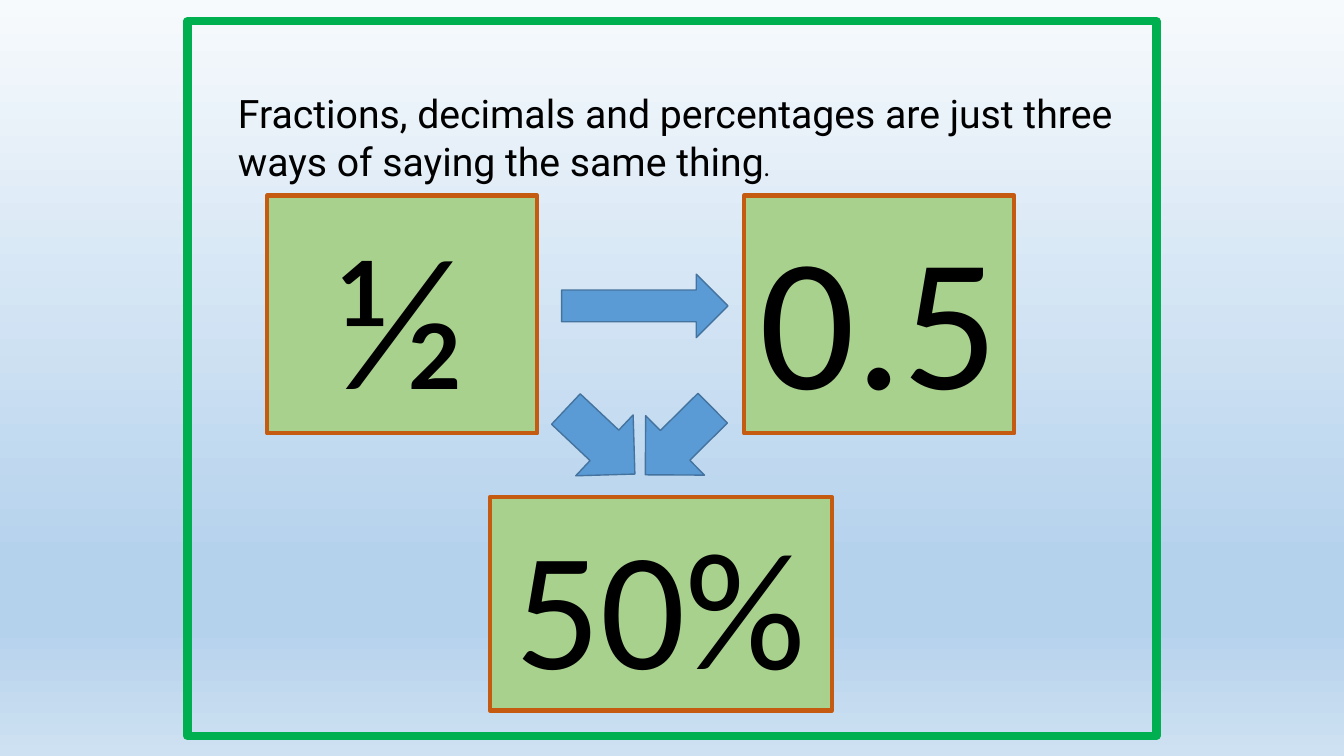
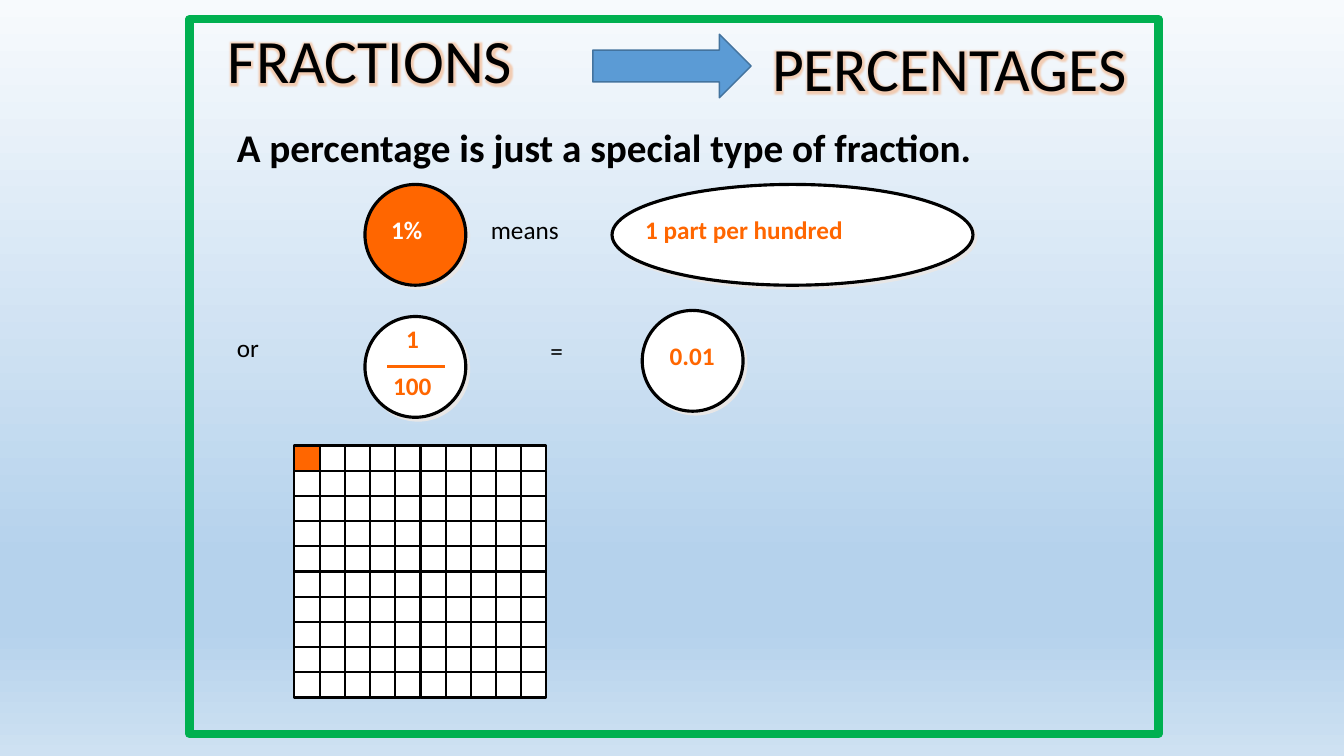
"""Builds two slides on fractions, decimals and percentages."""
from itertools import product

from lxml import etree
from pptx import Presentation
from pptx.dml.color import RGBColor
from pptx.enum.shapes import MSO_CONNECTOR as Connector, MSO_SHAPE as Shape
from pptx.enum.text import MSO_ANCHOR as Anchor, MSO_AUTO_SIZE as AutoSize, PP_ALIGN as Align
from pptx.oxml import parse_xml
from pptx.oxml.ns import nsdecls, qn
from pptx.util import Inches, Pt

COLORS = {
    "ink": "000000", "white": "FFFFFF", "orange": "FF6600", "frame": "00B050",
    "tile": "A9D18E", "tile_edge": "C55A11", "arrow": "5B9BD5", "arrow_edge": "43739E",
    "shadow": "E7E6E6", "glow": "F4B183",
    "sky_top": "F7FAFD", "sky_mid": "B5D2EC", "sky_low": "CEE1F2",
}
SKY = [(0, "sky_top"), (74, "sky_mid"), (83, "sky_mid"), (100, "sky_low")]
CELL = 0.25
CIRCLE = 4
LABEL = 1.6
TITLE_ONLY = 5


def grid(*cells):
    return [Inches(CELL * count) for count in cells]


def rgb(name):
    return RGBColor.from_string(COLORS[name])


def paint_sky(master):
    stops = "".join(
        f'<a:gs pos="{share * 1000}"><a:srgbClr val="{COLORS[name]}"/></a:gs>' for share, name in SKY)
    fill = master.background.fill
    fill.gradient()
    gradient = master.element.find(".//" + qn("a:gradFill"))
    gradient.getparent().replace(gradient, parse_xml(
        f'<a:gradFill {nsdecls("a")} rotWithShape="1"><a:gsLst>{stops}</a:gsLst>'
        '<a:lin ang="5400000" scaled="0"/></a:gradFill>'))


def style_run(run, size, color="ink", bold=False, font="Calibri"):
    run.font.size, run.font.name, run.font.bold = Pt(size), font, bold
    run.font.color.rgb = rgb(color)


def write(shape, text, size, align=Align.LEFT, anchor=Anchor.TOP, wrap=True, **style):
    frame = shape.text_frame
    frame.text = text
    frame.word_wrap, frame.auto_size = wrap, AutoSize.SHAPE_TO_FIT_TEXT
    frame.vertical_anchor = anchor
    paragraph = frame.paragraphs[0]
    paragraph.alignment = align
    style_run(paragraph.runs[0], size, **style)
    return paragraph


def add_glow(paragraph):
    fill = paragraph.runs[0].font.fill
    fill.solid()
    fill.fore_color.rgb = rgb("ink")
    properties = paragraph.runs[0].font._element
    properties.find(qn("a:solidFill")).addnext(parse_xml(
        f'<a:effectLst {nsdecls("a")}><a:glow rad="63500"><a:srgbClr val="{COLORS["glow"]}">'
        '<a:alpha val="60000"/></a:srgbClr></a:glow></a:effectLst>'))


def add_title(slide, place, text, size, **style):
    title = slide.shapes.title
    title.left, title.top, title.width, title.height = grid(*place)
    return write(title, text, size, **style)


def add_label(shapes, place, text, size=18, wrap=False, **style):
    return write(shapes.add_textbox(*grid(*place)), text, size, wrap=wrap, **style)


def add_outline(shapes, kind, place, fill, edge, weight):
    shape = shapes.add_shape(kind, *grid(*place))
    shape.shadow.inherit = False
    if fill:
        shape.fill.solid()
        shape.fill.fore_color.rgb = rgb(fill)
    else:
        shape.fill.background()
    shape.line.color.rgb, shape.line.width = rgb(edge), Pt(weight)
    return shape


def add_frame(slide, left, top):
    add_outline(slide.shapes, Shape.RECTANGLE, (left, top, 38.44, 28.36), None, "frame", 6)


def add_tile(slide, place, text, size):
    tile = add_outline(slide.shapes, Shape.RECTANGLE, place, "tile", "tile_edge", 3)
    write(tile, text, size, align=Align.CENTER)


def add_arrow(slide, kind, place, rotation=0):
    add_outline(slide.shapes, kind, place, "arrow", "arrow_edge", 1).rotation = rotation


def add_bubble(slide, left, top, width=CIRCLE, fill="white"):
    bubble = slide.shapes.add_group_shape()
    oval = add_outline(bubble.shapes, Shape.OVAL, (left, top, width, CIRCLE), fill, "ink", 2.25)
    effects = oval._element.spPr.find(qn("a:effectLst"))
    effects.append(parse_xml(
        f'<a:outerShdw {nsdecls("a")} dist="{Pt(2.8)}" dir="2700000" algn="ctr" rotWithShape="0">'
        f'<a:srgbClr val="{COLORS["shadow"]}"/></a:outerShdw>'))
    return bubble.shapes


def add_fraction_bar(shapes, left, right, top):
    bar = shapes.add_connector(Connector.STRAIGHT, *grid(left, top, right, top))
    bar.line.color.rgb, bar.line.width = rgb("orange"), Pt(2.25)
    etree.SubElement(bar._element.spPr, qn("a:effectLst"))


def add_hundred_square(slide, left, top, side=10):
    squares = slide.shapes.add_group_shape().shapes
    for column, row in product(range(side), repeat=2):
        fill = "orange" if column == row == 0 else "white"
        add_outline(squares, Shape.RECTANGLE, (left + column, top + row, 1, 1), fill, "ink", 1.5)


def build_three_ways(slide):
    sentence = add_title(
        slide, (9.04, 3.36, 37.64, 6.6),
        "Fractions, decimals and percentages are just three ways of saying the same thing",
        28, font="Roboto")
    full_stop = sentence.add_run()
    full_stop.text = "."
    style_run(full_stop, 18)
    add_frame(slide, 7.44, 0.84)
    add_tile(slide, (10.6, 7.76, 10.72, 9.44), "½", 135)
    add_tile(slide, (29.52, 7.76, 10.72, 9.44), "0.5", 135)
    add_tile(slide, (19.44, 19.72, 13.56, 8.48), "50%", 120)
    add_arrow(slide, Shape.RIGHT_ARROW, (22.28, 10.88, 6.6, 2.52))
    for left, rotation in ((25.28, 45.3), (22.16, 313.3)):
        add_arrow(slide, Shape.DOWN_ARROW, (left, 15.64, 3.32, 3.76), rotation)


def build_percentages(slide):
    fractions = add_title(slide, (8.64, 1, 15.24, 3.08), "FRACTIONS", 44, anchor=Anchor.MIDDLE)
    fractions.line_spacing = 0.9
    percentages = add_label(slide.shapes, (30.24, 1, 15.04, 3.36), "PERCENTAGES", 44)
    for heading in (fractions, percentages):
        add_glow(heading)
    add_arrow(slide, Shape.RIGHT_ARROW, (23.52, 1.36, 6.28, 2.52))
    add_label(slide.shapes, (9, 4.68, 33.68, 2.28),
              "A percentage is just a special type of fraction.", 28, wrap=True, bold=True)

    accent = {"color": "orange", "bold": True}
    percent = add_bubble(slide, 14.48, 7.32, fill="orange")
    add_label(percent, (15.12, 8.32, 2.04, LABEL), "1%", color="white", bold=True)
    meaning = add_bubble(slide, 24.28, 7.32, width=14.32)
    add_label(meaning, (25.2, 8.32, 8.72, LABEL), "1 part per hundred", **accent)
    fraction = add_bubble(slide, 14.48, 12.56)
    add_fraction_bar(fraction, 15.36, 17.64, 14.56)
    add_label(fraction, (15.72, 12.64, 1.32, LABEL), "1", **accent)
    add_label(fraction, (15.08, 14.48, 2.56, LABEL), "100", align=Align.CENTER, **accent)
    decimal = add_bubble(slide, 25.48, 12.32)
    add_label(decimal, (26.16, 13.32, 2.6, LABEL), "0.01", align=Align.CENTER, **accent)

    for text, left, top, width in (
            ("means", 19.08, 8.32, 3.52), ("or", 9, 13, 1.68), ("=", 21.44, 13.12, 1.32)):
        add_label(slide.shapes, (left, top, width, LABEL), text)
    add_hundred_square(slide, 11.68, 17.68)
    add_frame(slide, 7.52, 0.76)


def main():
    deck = Presentation()
    deck.slide_width, deck.slide_height = Inches(13.33), Inches(7.5)
    paint_sky(deck.slide_master)
    for build in (build_three_ways, build_percentages):
        build(deck.slides.add_slide(deck.slide_layouts[TITLE_ONLY]))
    deck.save("out.pptx")


if __name__ == "__main__":
    main()
